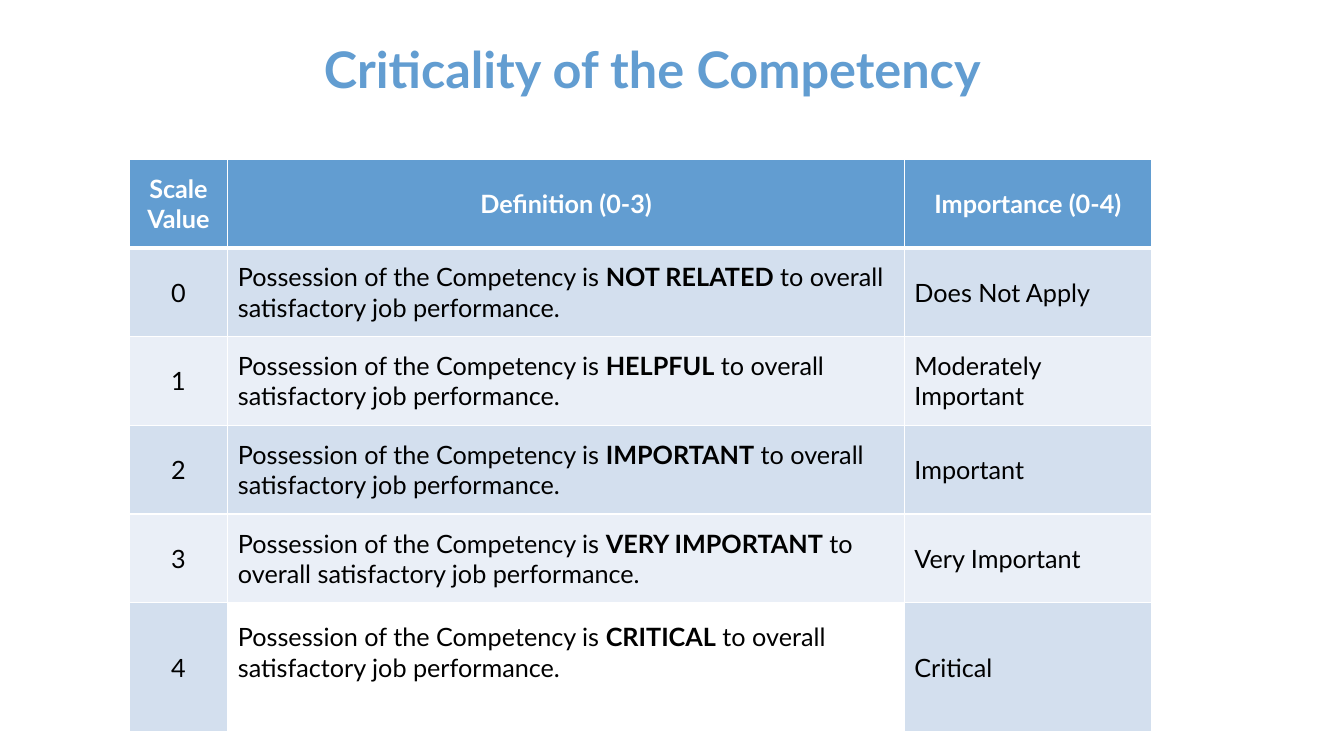
import pptx
import pptx.dml.color
import pptx.enum.text
import pptx.oxml
import pptx.oxml.ns
import pptx.util
from pptx.util import Inches

TITLE = "Criticality of the Competency"
HEADINGS = ["Scale Value", "Definition (0-3)", "Importance (0-4)"]
LEVELS = [
    ("NOT RELATED", "Does Not Apply"),
    ("HELPFUL", "Moderately Important"),
    ("IMPORTANT", "Important"),
    ("VERY IMPORTANT", "Very Important"),
    ("CRITICAL", "Critical"),
]
BEFORE, AFTER = "Possession of the Competency is ", " to overall satisfactory job performance."
COLUMN_WIDTHS = [0.98, 6.71, 2.45]
ROW_HEIGHTS = [0.88] * 5 + [1.28]

BLUE, WHITE, BLACK = "629DD1", "FFFFFF", "000000"
BANDS = ["D3DFEE", "EAEFF7"]
CENTER = pptx.enum.text.PP_ALIGN.CENTER
LEFT = pptx.enum.text.PP_ALIGN.LEFT
MIDDLE = pptx.enum.text.MSO_ANCHOR.MIDDLE


def rgb(value):
    return pptx.dml.color.RGBColor.from_string(value)


def write(para, text, size, color, bold):
    span = para.add_run()
    span.text = text
    formats = {"name": "Lato", "size": pptx.util.Pt(size), "bold": bold}
    for name, value in formats.items():
        setattr(span.font, name, value)
    span.font.color.rgb = rgb(color)


def set_borders(cell, widths):
    """Give the cell white borders; widths are points by side: L, R, T, B."""
    properties = cell._tc.get_or_add_tcPr()
    for place, (side, width) in enumerate(widths.items()):
        properties.insert(place, pptx.oxml.parse_xml(
            f'<a:ln{side} {pptx.oxml.ns.nsdecls("a")} w="{pptx.util.Pt(width)}">'
            f'<a:solidFill><a:srgbClr val="{WHITE}"/></a:solidFill></a:ln{side}>'))


def fill_cell(cell, spans, fill, color, align, borders):
    cell.fill.solid()
    cell.fill.fore_color.rgb = rgb(fill)
    cell.vertical_anchor = MIDDLE
    para = cell.text_frame.paragraphs[0]
    para.alignment = align
    for text, bold in spans:
        write(para, text, 18, color, bold)
    set_borders(cell, borders)


def add_title(page):
    title = page.shapes.title
    box = {"left": 1.97, "top": 0.33, "width": 9, "height": 1.25}
    for name, value in box.items():
        setattr(title, name, Inches(value))
    title.text_frame.word_wrap = True
    title.text_frame.vertical_anchor = pptx.enum.text.MSO_ANCHOR.TOP
    para = title.text_frame.paragraphs[0]
    para.alignment = CENTER
    write(para, TITLE, 36, BLUE, True)


def add_scale_table(page):
    table = page.shapes.add_table(
        len(ROW_HEIGHTS), len(COLUMN_WIDTHS), Inches(1.28), Inches(1.58),
        Inches(sum(COLUMN_WIDTHS)), Inches(sum(ROW_HEIGHTS))).table
    for column, width in zip(table.columns, COLUMN_WIDTHS):
        column.width = Inches(width)
    for row, height in zip(table.rows, ROW_HEIGHTS):
        row.height = Inches(height)

    for column, heading in enumerate(HEADINGS):
        fill_cell(table.cell(0, column), [(heading, True)], BLUE, WHITE, CENTER,
                  {"L": 1, "R": 1, "T": 1, "B": 3})

    for value, (degree, importance) in enumerate(LEVELS):
        band = BANDS[value % 2]
        last = value == len(LEVELS) - 1
        definition = [(BEFORE, False), (degree, True), (AFTER, False)]
        contents = [
            ([(str(value), False)], band, CENTER),
            (definition, WHITE if last else band, LEFT),
            ([(importance, False)], band, LEFT),
        ]
        borders = {"L": 1, "R": 1, "T": 1 if value else 3, "B": 1}
        for column, (spans, fill, align) in enumerate(contents):
            fill_cell(table.cell(value + 1, column), spans, fill, BLACK, align, borders)
    # The last definition sits one line higher than its neighbours
    table.cell(len(LEVELS), 1).margin_bottom = Inches(0.35)


def main():
    deck = pptx.Presentation()
    deck.slide_width, deck.slide_height = Inches(13.33), Inches(7.5)
    page = deck.slides.add_slide(deck.slide_layouts[5])
    add_title(page)
    add_scale_table(page)
    deck.save("out.pptx")


if __name__ == "__main__":
    main()
